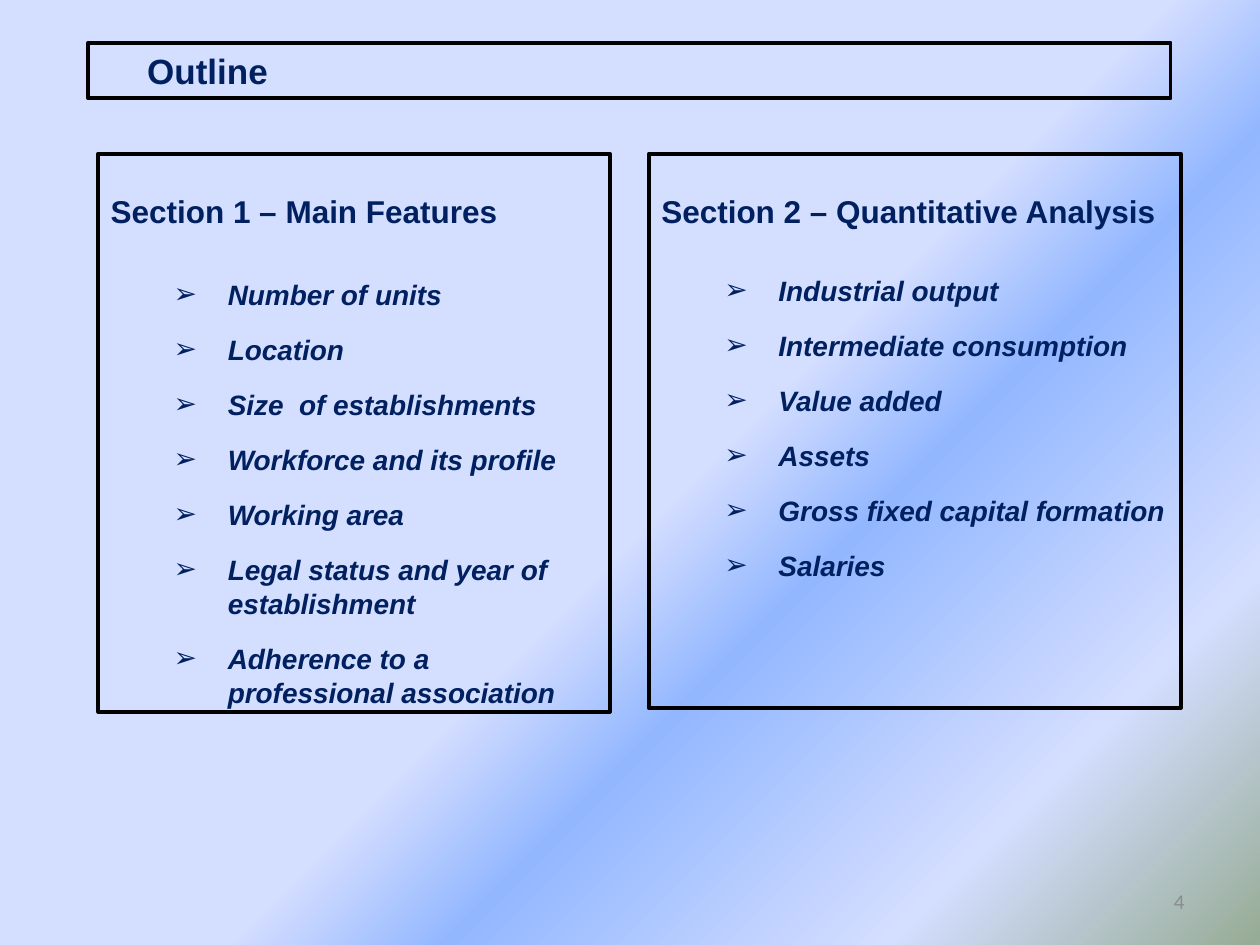
from lxml import etree
from pptx import Presentation
from pptx.dml.color import RGBColor
from pptx.enum import shapes, text
from pptx.oxml.ns import qn
from pptx.util import Pt

TITLE = "Outline"
PAGE = "4"
SECTIONS = [
    {"heading": "Section 1 – Main Features", "box": (56.16, 87.84, 292.32, 318.96),
     "heading_gap": 21, "heading_indent": 27.36,
     "topics": ["Number of units", "Location", "Size  of establishments",
                "Workforce and its profile", "Working area",
                "Legal status and year of establishment",
                "Adherence to a professional association"]},
    {"heading": "Section 2 – Quantitative Analysis", "box": (370.8, 87.84, 303.84, 316.8),
     "heading_gap": 18.7, "heading_indent": 36.72,
     "topics": ["Industrial output", "Intermediate consumption", "Value added",
                "Assets", "Gross fixed capital formation", "Salaries"]},
]
THEME = {
    "ink": "002060", "border": "000000", "page": "8C8C8C",
    "font": "Arial", "page_font": "Calibri",
    "title_size": 20, "heading_size": 18, "topic_size": 16, "page_size": 12,
    "background": [(0, "D4DEFF"), (53, "D4DEFF"), (63, "93B7FF"),
                   (83, "D4DEFF"), (100, "96AB94")],
}


def assign(target, values):
    for name, value in values.items():
        setattr(target, name, value)


def paint_background(slide):
    fill = slide.background.fill
    fill.gradient()
    gradient = slide.background._cSld.find(".//" + qn("a:gradFill"))
    stops = gradient.find(qn("a:gsLst"))
    for stop in list(stops):
        stops.remove(stop)
    for percent, colour in THEME["background"]:
        stop = etree.SubElement(stops, qn("a:gs"), pos=str(percent * 1000))
        etree.SubElement(stop, qn("a:srgbClr"), val=colour)
    direction = gradient.find(qn("a:lin"))
    direction.set("ang", str(45 * 60000))
    direction.set("scaled", "0")


def add_box(slide, box, **frame_format):
    outline = slide.shapes.add_shape(shapes.MSO_SHAPE.RECTANGLE, *map(Pt, box))
    outline.shadow.inherit = False
    outline.fill.background()
    outline.line.color.rgb = RGBColor.from_string(THEME["border"])
    outline.line.width = Pt(2.25)
    assign(outline.text_frame, {"word_wrap": True,
                                "vertical_anchor": text.MSO_ANCHOR.TOP, **frame_format})
    return outline.text_frame


def write(paragraph, words, size, margin=0, hanging=0, colour="ink", font="font",
          bold=True, italic=False, **paragraph_format):
    assign(paragraph, {"alignment": text.PP_ALIGN.LEFT, **paragraph_format})
    properties = paragraph._p.get_or_add_pPr()
    properties.set("marL", str(Pt(margin)))
    properties.set("indent", str(-Pt(hanging)))
    run = paragraph.add_run()
    run.text = words
    assign(run.font, {"name": THEME[font], "size": Pt(THEME[size]),
                      "bold": bold, "italic": italic})
    run.font.color.rgb = RGBColor.from_string(THEME[colour])


def add_bullet(paragraph):
    properties = paragraph._p.get_or_add_pPr()
    etree.SubElement(properties, qn("a:buFont"), typeface=THEME["font"])
    etree.SubElement(properties, qn("a:buChar"), char="➢")


def add_section(slide, section):
    frame = add_box(slide, section["box"], margin_top=Pt(22), margin_bottom=0)
    indent = section["heading_indent"]
    write(frame.paragraphs[0], section["heading"], "heading_size", indent, indent,
          space_after=Pt(section["heading_gap"]))
    for topic in section["topics"]:
        paragraph = frame.add_paragraph()
        write(paragraph, topic, "topic_size", 66.96, 30.96, italic=True, level=1,
              space_before=Pt(6), space_after=Pt(6), line_spacing=Pt(19.4))
        add_bullet(paragraph)


def main():
    deck = Presentation()
    assign(deck, {"slide_width": Pt(720), "slide_height": Pt(540)})
    slide = deck.slides.add_slide(deck.slide_layouts[6])
    paint_background(slide)

    number = slide.shapes.add_textbox(*map(Pt, (516.24, 500.4, 167.76, 28.8))).text_frame
    assign(number, {"word_wrap": True, "vertical_anchor": text.MSO_ANCHOR.MIDDLE})
    write(number.paragraphs[0], PAGE, "page_size", colour="page", font="page_font",
          bold=False, alignment=text.PP_ALIGN.RIGHT)

    title = add_box(slide, (50.4, 24.48, 618.48, 31.68))
    write(title.paragraphs[0], TITLE, "title_size", 54.72, 28.08)
    for section in SECTIONS:
        add_section(slide, section)
    deck.save("out.pptx")


if __name__ == "__main__":
    main()
